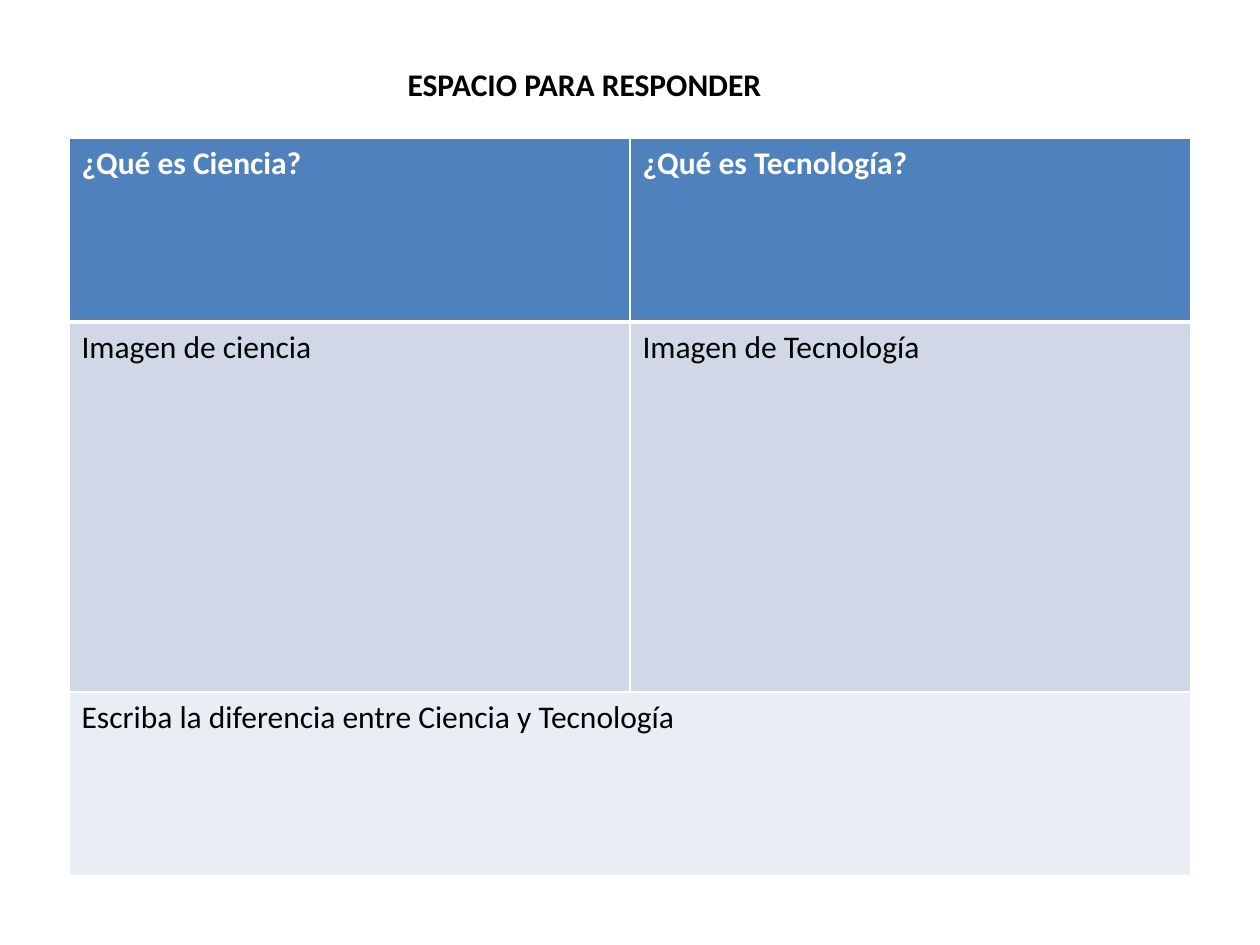
import pptx
import pptx.dml.color
import pptx.enum.text
import pptx.oxml
import pptx.oxml.ns
import pptx.util

WHITE = pptx.dml.color.RGBColor(0xFF, 0xFF, 0xFF)
BLACK = pptx.dml.color.RGBColor(0x00, 0x00, 0x00)
BLUE = pptx.dml.color.RGBColor(0x4F, 0x81, 0xBD)
LIGHT_BLUE = pptx.dml.color.RGBColor(0xD0, 0xD8, 0xE8)
PALE_BLUE = pptx.dml.color.RGBColor(0xE9, 0xED, 0xF4)

TITLE = "ESPACIO PARA RESPONDER"
# Texts, height in px, fill, text colour, bold, bottom border in points
ROWS = [
    (("¿Qué es Ciencia?", "¿Qué es Tecnología?"), 184, BLUE, WHITE, True, 3),
    (("Imagen de ciencia", "Imagen de Tecnología"), 370, LIGHT_BLUE, BLACK, False, 1),
    (("Escriba la diferencia entre Ciencia y Tecnología",), 184, PALE_BLUE, BLACK, False, 1),
]
COLUMN_COUNT = 2
COLUMN_WIDTH = 561
TABLE_LEFT, TABLE_TOP = 69, 138
TITLE_BOX = (393, 59, 383, 51)


def px(length):
    return round(length * 914400 / 126)


def add_text(paragraph, text, colour, bold):
    run = paragraph.add_run()
    run.text = text
    run.font.name = "Calibri"
    run.font.size = pptx.util.Pt(18)
    run.font.bold = bold
    run.font.color.rgb = colour


def set_borders(cell, top, bottom):
    properties = cell._tc.get_or_add_tcPr()
    for side, points in (("L", 1), ("R", 1), ("T", top), ("B", bottom)):
        properties.append(pptx.oxml.parse_xml(
            f'<a:ln{side} {pptx.oxml.ns.nsdecls("a")} w="{pptx.util.Pt(points)}">'
            f'<a:solidFill><a:srgbClr val="{WHITE}"/></a:solidFill></a:ln{side}>'))


def add_title(slide):
    title = slide.shapes.title
    title.left, title.top, title.width, title.height = map(px, TITLE_BOX)
    frame = title.text_frame
    frame.word_wrap = False
    frame.auto_size = pptx.enum.text.MSO_AUTO_SIZE.SHAPE_TO_FIT_TEXT
    frame.vertical_anchor = pptx.enum.text.MSO_ANCHOR.TOP
    paragraph = frame.paragraphs[0]
    paragraph.alignment = pptx.enum.text.PP_ALIGN.CENTER
    add_text(paragraph, TITLE, BLACK, True)


def add_answer_table(slide):
    table = slide.shapes.add_table(
        len(ROWS), COLUMN_COUNT, px(TABLE_LEFT), px(TABLE_TOP),
        px(COLUMN_COUNT * COLUMN_WIDTH), px(sum(row[1] for row in ROWS))).table
    for column in table.columns:
        column.width = px(COLUMN_WIDTH)
    top = 1
    for index, (texts, height, fill, colour, bold, bottom) in enumerate(ROWS):
        table.rows[index].height = px(height)
        if len(texts) < COLUMN_COUNT:
            table.cell(index, 0).merge(table.cell(index, COLUMN_COUNT - 1))
        for cell in table.rows[index].cells:
            set_borders(cell, top, bottom)
            cell.fill.solid()
            cell.fill.fore_color.rgb = fill
        for column, text in enumerate(texts):
            add_text(table.cell(index, column).text_frame.paragraphs[0], text, colour, bold)
        top = bottom


def main():
    presentation = pptx.Presentation()
    presentation.slide_width = px(1260)
    presentation.slide_height = px(945)
    slide = presentation.slides.add_slide(presentation.slide_layouts.get_by_name("Title Only"))
    add_title(slide)
    add_answer_table(slide)
    presentation.save("out.pptx")


if __name__ == "__main__":
    main()
